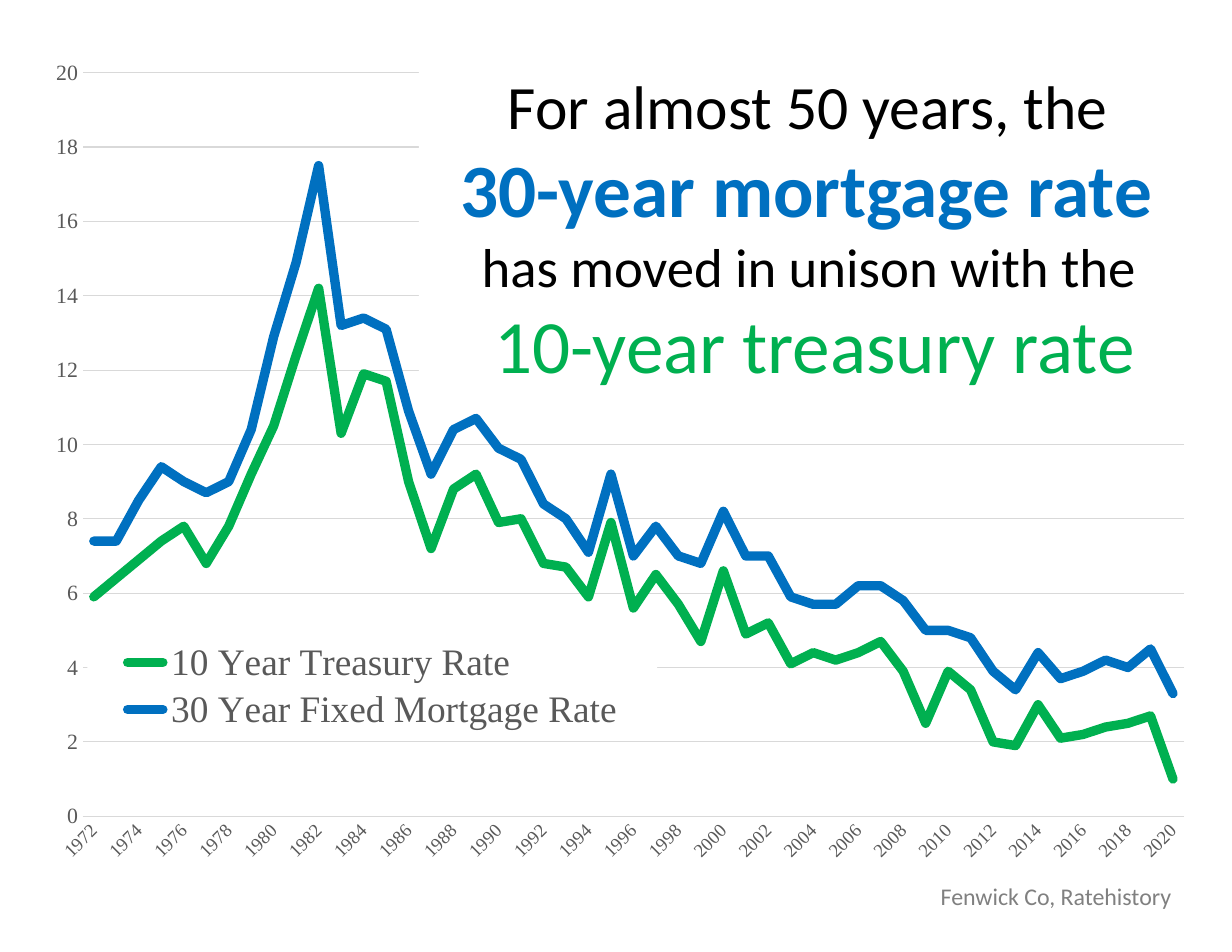
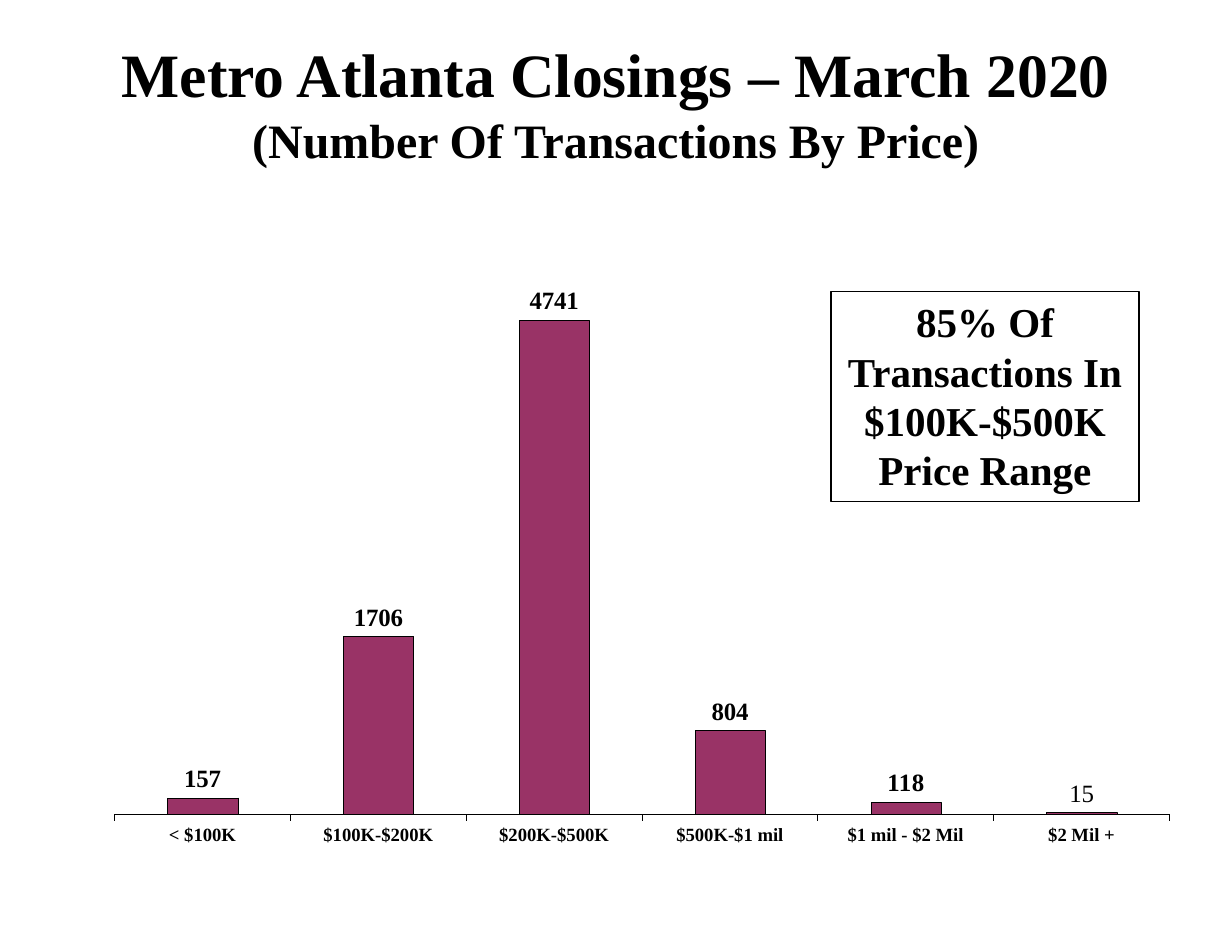
from lxml import etree
from pptx import Presentation
from pptx.chart.data import CategoryChartData
from pptx.dml.color import RGBColor
from pptx.enum.chart import (XL_CHART_TYPE, XL_LABEL_POSITION, XL_LEGEND_POSITION,
                             XL_MARKER_STYLE, XL_TICK_LABEL_POSITION, XL_TICK_MARK)
from pptx.enum.text import MSO_ANCHOR, MSO_AUTO_SIZE, PP_ALIGN
from pptx.oxml import parse_xml
from pptx.oxml.ns import qn
from pptx.util import Inches, Pt

LINE, COLUMN = XL_CHART_TYPE.LINE, XL_CHART_TYPE.COLUMN_CLUSTERED
NO_TICK, OUT_TICK = XL_TICK_MARK.NONE, XL_TICK_MARK.OUTSIDE
LOW, ABOVE = XL_TICK_LABEL_POSITION.LOW, XL_LABEL_POSITION.OUTSIDE_END
NO_MARK, BOTTOM = XL_MARKER_STYLE.NONE, XL_LEGEND_POSITION.BOTTOM
CENTER, LEFT, MIDDLE = PP_ALIGN.CENTER, PP_ALIGN.LEFT, MSO_ANCHOR.MIDDLE

# Shared look
WIDE, HIGH = 11, 8.5
COLS, ROWS = 110, 85
SERIF, SANS = "Times New Roman", "Calibri"
BLACK, WHITE, GREY, PALE, DIM = "000000", "FFFFFF", "595959", "D9D9D9", "808080"
GREEN, BLUE, PLUM = "00B050", "0070C0", "993366"
SPACE = ('xmlns:c="http://schemas.openxmlformats.org/drawingml/2006/chart" '
         'xmlns:a="http://schemas.openxmlformats.org/drawingml/2006/main"')

# Rates from 1972 to 2020
START = 1972
BONDS = [5.9, 6.4, 6.9, 7.4, 7.8, 6.8, 7.8, 9.2, 10.5, 12.4, 14.2, 10.3, 11.9, 11.7,
         9, 7.2, 8.8, 9.2, 7.9, 8, 6.8, 6.7, 5.9, 7.9, 5.6, 6.5, 5.7, 4.7, 6.6, 4.9,
         5.2, 4.1, 4.4, 4.2, 4.4, 4.7, 3.9, 2.5, 3.9, 3.4, 2, 1.9, 3, 2.1, 2.2, 2.4,
         2.5, 2.7, 1]
LOANS = [7.4, 7.4, 8.5, 9.4, 9, 8.7, 9, 10.4, 12.9, 14.9, 17.5, 13.2, 13.4, 13.1,
         10.9, 9.2, 10.4, 10.7, 9.9, 9.6, 8.4, 8, 7.1, 9.2, 7, 7.8, 7, 6.8, 8.2, 7,
         7, 5.9, 5.7, 5.7, 6.2, 6.2, 5.8, 5, 5, 4.8, 3.9, 3.4, 4.4, 3.7, 3.9, 4.2,
         4, 4.5, 3.3]
SALES = {"< $100K": 157, "$100K-$200K": 1706, "$200K-$500K": 4741,
         "$500K-$1 mil": 804, "$1 mil - $2 Mil": 118, "$2 Mil +": 15}


def color(code):
    return RGBColor.from_string(code)


def place(box):
    """Turn grid columns and rows into slide lengths."""
    x, y, w, h = box
    return (Inches(x * WIDE / COLS), Inches(y * HIGH / ROWS),
            Inches(w * WIDE / COLS), Inches(h * HIGH / ROWS))


def style(font, size, tone=BLACK, bold=False, face=SERIF):
    font.name, font.size, font.bold = face, Pt(size), bold
    font.color.rgb = color(tone)


def stroke(line, tone, width):
    line.color.rgb = color(tone)
    line.width = Pt(width)


def paint(part, tone):
    part.fill.solid()
    part.fill.fore_color.rgb = color(tone)


def write(para, text, *look, align=CENTER):
    para.alignment = align
    run = para.add_run()
    run.text = text
    style(run.font, *look)


def add_box(slide, box, wrap=True):
    shape = slide.shapes.add_textbox(*place(box))
    shape.text_frame.word_wrap = wrap
    return shape


def lay_out(parent, spot, share, inner=False):
    """Pin a chart part to shares of the chart's size."""
    for old in parent.findall(qn("c:layout")):
        parent.remove(old)
    target = '<c:layoutTarget val="inner"/>' if inner else ""
    modes = '<c:xMode val="edge"/><c:yMode val="edge"/>'
    sizes = "".join(f'<c:{k} val="{v}"/>' for k, v in zip("xywh", share))
    parent.insert(spot, parse_xml(f"<c:layout {SPACE}><c:manualLayout>{target}{modes}"
                                  f"{sizes}</c:manualLayout></c:layout>"))


def add_plot(slide, box, kind, names, series, share, top):
    data = CategoryChartData()
    data.categories = names
    for name, vals in series:
        data.add_series(name, vals)
    chart = slide.shapes.add_chart(kind, *place(box), data).chart
    chart.has_title = chart.has_legend = False
    style(chart.font, 10)
    chart.plots[0].vary_by_categories = False
    axis = chart.value_axis
    axis.minimum_scale, axis.maximum_scale = 0, top
    lay_out(chart._chartSpace.find(".//" + qn("c:plotArea")), 0, share, True)
    return chart


def add_key(chart, share):
    chart.has_legend = True
    key = chart.legend
    key.position, key.include_in_layout = BOTTOM, False
    style(key.font, 24, GREY)
    node = key._element
    lay_out(node, 1, share)
    node.find(qn("c:overlay")).addnext(parse_xml(
        f'<c:spPr {SPACE}><a:solidFill><a:srgbClr val="{WHITE}"/></a:solidFill></c:spPr>'))


def rate_chart(slide, box):
    years = [str(START + i) for i in range(len(BONDS))]
    series = [("10 Year Treasury Rate", BONDS), ("30 Year Fixed Mortgage Rate", LOANS)]
    chart = add_plot(slide, box, LINE, years, series, (0.046, 0.027, 0.928, 0.901), 20)
    for item, tone in zip(chart.plots[0].series, (GREEN, BLUE)):
        item.smooth = False
        item.marker.style = NO_MARK
        stroke(item.format.line, tone, 6)
        item._element.find(".//" + qn("a:ln")).set("cap", "rnd")
    # Axes
    rates, dates = chart.value_axis, chart.category_axis
    rates.major_unit = 2
    rates.format.line.fill.background()
    stroke(rates.major_gridlines.format.line, PALE, 0.75)
    stroke(dates.format.line, PALE, 0.75)
    for axis, size in ((rates, 14), (dates, 12)):
        axis.major_tick_mark = axis.minor_tick_mark = NO_TICK
        style(axis.tick_labels.font, size, GREY)
    node = dates._element
    node.find(".//" + qn("a:bodyPr")).set("rot", "-2700000")
    skip = etree.Element(qn("c:tickLblSkip"), val="2")
    node.find(qn("c:noMultiLvlLbl")).addprevious(skip)
    add_key(chart, (0.05, 0.71, 0.48, 0.12))


def claim(slide, box):
    shape = add_box(slide, box)
    paint(shape, WHITE)
    frame = shape.text_frame
    lines = [("For almost 50 years, the ", 39.6, BLACK, False),
             ("30-year mortgage rate ", 48.4, BLUE, True),
             ("has moved in unison with the ", 35.2, BLACK, False),
             ("10-year treasury rate", 48.4, GREEN, False)]
    for i, (text, *look) in enumerate(lines):
        para = frame.add_paragraph() if i else frame.paragraphs[0]
        write(para, text, *look, SANS)


def credit(slide, box):
    para = add_box(slide, box, False).text_frame.paragraphs[0]
    write(para, "Fenwick Co, Ratehistory", 15.4, DIM, False, SANS, align=LEFT)


def heading(slide, box):
    title = slide.shapes.title
    title.left, title.top, title.width, title.height = place(box)
    frame = title.text_frame
    frame.auto_size, frame.vertical_anchor = MSO_AUTO_SIZE.NONE, MIDDLE
    para = frame.paragraphs[0]
    write(para, "Metro Atlanta Closings – March 2020", 39.6, BLACK, True)
    para.add_line_break()
    write(para, "(Number Of Transactions By Price)", 30.8, BLACK, True)


def price_chart(slide, box):
    chart = add_plot(slide, box, COLUMN, list(SALES), [("Series 1", SALES.values())],
                     (0.028, 0.129, 0.962, 0.776), 5000)
    plot = chart.plots[0]
    plot.gap_width = 150
    bars = plot.series[0]
    paint(bars.format, PLUM)
    stroke(bars.format.line, BLACK, 0.06)
    # Axes
    chart.value_axis.has_major_gridlines = False
    chart.value_axis.visible = False
    axis = chart.category_axis
    axis.major_tick_mark, axis.tick_label_position = OUT_TICK, LOW
    stroke(axis.format.line, BLACK, 0.01)
    style(axis.tick_labels.font, 12, BLACK, True)
    # Counts above the bars, the last one in plain type
    tags = bars.data_labels
    tags.show_value, tags.position = True, ABOVE
    tags.number_format, tags.number_format_is_linked = "0", False
    style(tags.font, 16, BLACK, True)
    last = len(SALES) - 1
    tag = bars.points[last].data_label
    write(tag.text_frame.paragraphs[0], str(list(SALES.values())[last]), 16)
    tag.position = ABOVE


def callout(slide, box):
    shape = add_box(slide, box)
    stroke(shape.line, BLACK, 0.75)
    write(shape.text_frame.paragraphs[0],
          "85% Of Transactions In $100K-$500K Price Range", 26.4, BLACK, True)


def main():
    deck = Presentation()
    deck.slide_width, deck.slide_height = Inches(WIDE), Inches(HIGH)
    bare, titled = deck.slide_layouts[6], deck.slide_layouts[5]

    rates = deck.slides.add_slide(bare)
    rate_chart(rates, (2.5, 4.5, 106, 73.7))
    claim(rates, (37.4, 5.6, 70.7, 29.9))
    credit(rates, (83, 78.2, 25.2, 3.6))

    sales = deck.slides.add_slide(titled)
    price_chart(sales, (7.5, 18.4, 97.9, 60))
    heading(sales, (0, 6.8, COLS, 4.6))
    callout(sales, (74.2, 26, 27.5, 18.8))

    deck.save("out.pptx")


if __name__ == "__main__":
    main()
